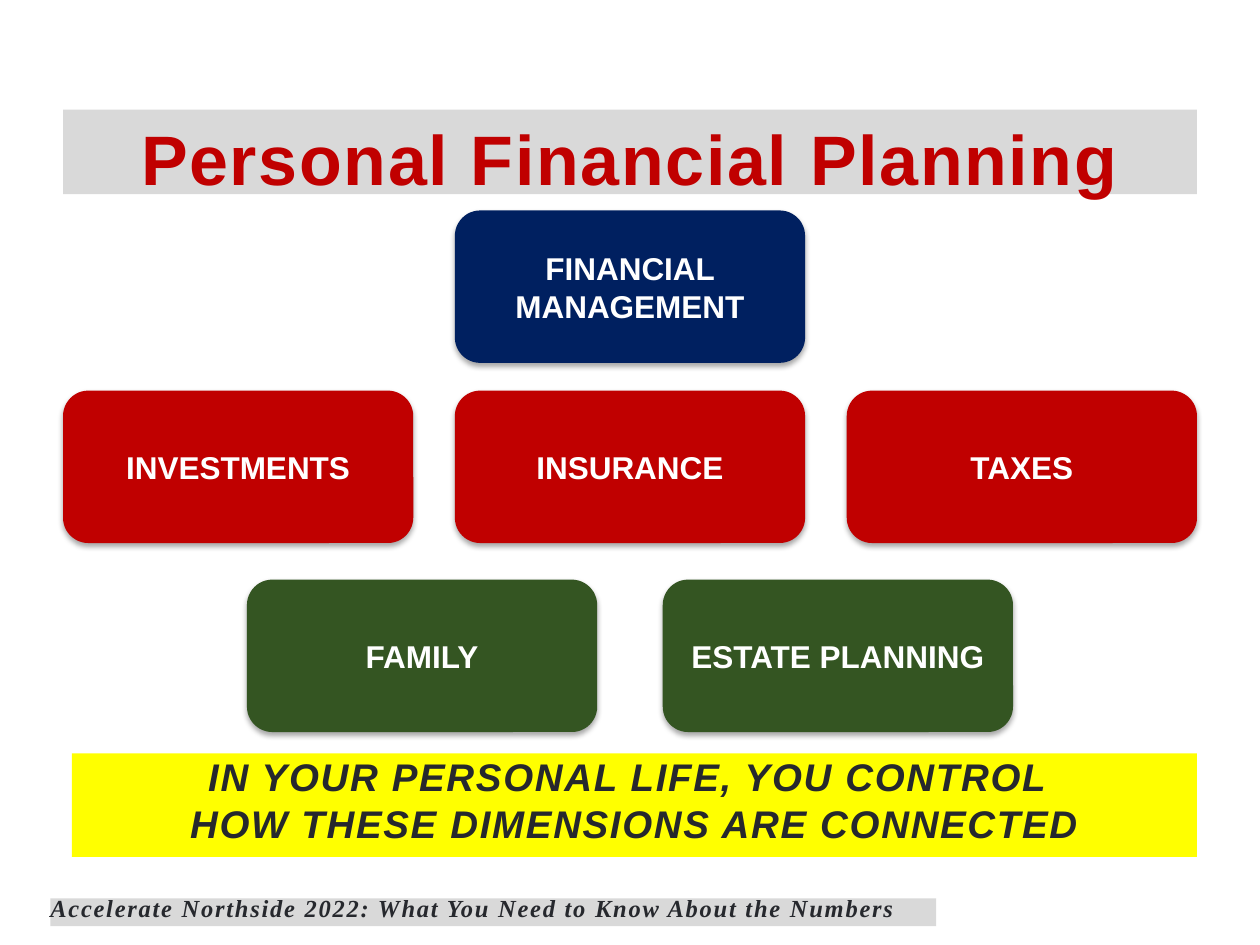
from lxml import etree
from pptx import Presentation
from pptx import util as u
from pptx.dml.color import RGBColor
from pptx.enum import shapes, text
from pptx.oxml import parse_xml
from pptx.oxml.ns import nsdecls, qn

COLORS = {
    "navy": "002060",
    "red": "C00000",
    "green": "345522",
    "yellow": "FFFF00",
    "grey": "D9D9D9",
    "ink": "26282D",
    "white": "FFFFFF",
}
SHADOW = (
    f'<a:outerShdw {nsdecls("a")} blurRad="39370" dist="22860" dir="5400000" rotWithShape="0">'
    '<a:srgbClr val="000000"><a:alpha val="35000"/></a:srgbClr></a:outerShdw>'
)


def paint(shape, color):
    shape.fill.solid()
    shape.fill.fore_color.rgb = RGBColor.from_string(COLORS[color])
    shape.line.fill.background()


def add_run(paragraph, wording, size, color, font="Arial", italic=False, spacing=0):
    run = paragraph.add_run()
    run.text = wording
    run.font.name = font
    run.font.size = u.Pt(size)
    run.font.bold = True
    run.font.italic = italic
    run.font.color.rgb = RGBColor.from_string(COLORS[color])
    if spacing:
        run._r.get_or_add_rPr().set("spc", str(spacing * 100))


prs = Presentation()
prs.slide_width, prs.slide_height = u.Inches(10), u.Inches(7.5)
slide = prs.slides.add_slide(prs.slide_layouts[5])

title = slide.shapes.title
title.left, title.top = u.Inches(0.5), u.Inches(0.87)
title.width, title.height = u.Inches(9), u.Inches(0.67)
paint(title, "grey")
heading = title.text_frame
heading.auto_size = text.MSO_AUTO_SIZE.NONE
heading.vertical_anchor = text.MSO_ANCHOR.TOP
heading.margin_left = heading.margin_right = heading.margin_bottom = 0
heading.margin_top = u.Inches(0.05)
heading.paragraphs[0].alignment = text.PP_ALIGN.CENTER
add_run(heading.paragraphs[0], "Personal Financial Planning", 40, "red", spacing=1)

card_width, card_height = 2.78, 1.21
tiers = [
    (1.67, 0, "navy", ["FINANCIAL MANAGEMENT"]),
    (3.1, 0.33, "red", ["INVESTMENTS", "INSURANCE", "TAXES"]),
    (4.6, 0.52, "green", ["FAMILY", "ESTATE PLANNING"]),
]
for top, gap, color, topics in tiers:
    tier_width = len(topics) * card_width + (len(topics) - 1) * gap
    left = (10 - tier_width) / 2
    for column, topic in enumerate(topics):
        card = slide.shapes.add_shape(
            shapes.MSO_SHAPE.ROUNDED_RECTANGLE,
            u.Inches(left + column * (card_width + gap)), u.Inches(top),
            u.Inches(card_width), u.Inches(card_height))
        card.shadow.inherit = False
        paint(card, color)
        card._element.spPr.find(qn("a:effectLst")).append(parse_xml(SHADOW))
        card.text_frame.word_wrap = True
        card.text_frame.vertical_anchor = text.MSO_ANCHOR.MIDDLE
        label = card.text_frame.paragraphs[0]
        label.alignment = text.PP_ALIGN.CENTER
        add_run(label, topic, 18, "white")

bands = [
    (0.57, 5.98, 8.93, 0.82, "yellow", text.PP_ALIGN.CENTER, 1, 22, "Arial",
     ["IN YOUR PERSONAL LIFE, YOU CONTROL ", "HOW THESE DIMENSIONS ARE CONNECTED"]),
    (0.4, 7.13, 7.03, 0.22, "grey", text.PP_ALIGN.LEFT, 0.8, 14, "Times New Roman",
     ["Accelerate Northside 2022: What You Need to Know About the Numbers"]),
]
for left, top, width, height, color, align, leading, size, font, lines in bands:
    band = slide.shapes.add_textbox(
        u.Inches(left), u.Inches(top), u.Inches(width), u.Inches(height))
    paint(band, color)
    frame = band.text_frame
    frame.word_wrap = True
    frame.margin_left = frame.margin_top = frame.margin_right = frame.margin_bottom = 0
    message = frame.paragraphs[0]
    message.alignment = align
    message.line_spacing = leading
    for number, line in enumerate(lines):
        if number:
            message.add_line_break()
        add_run(message, line, size, "ink", font, italic=True, spacing=1)

prs.save("out.pptx")
